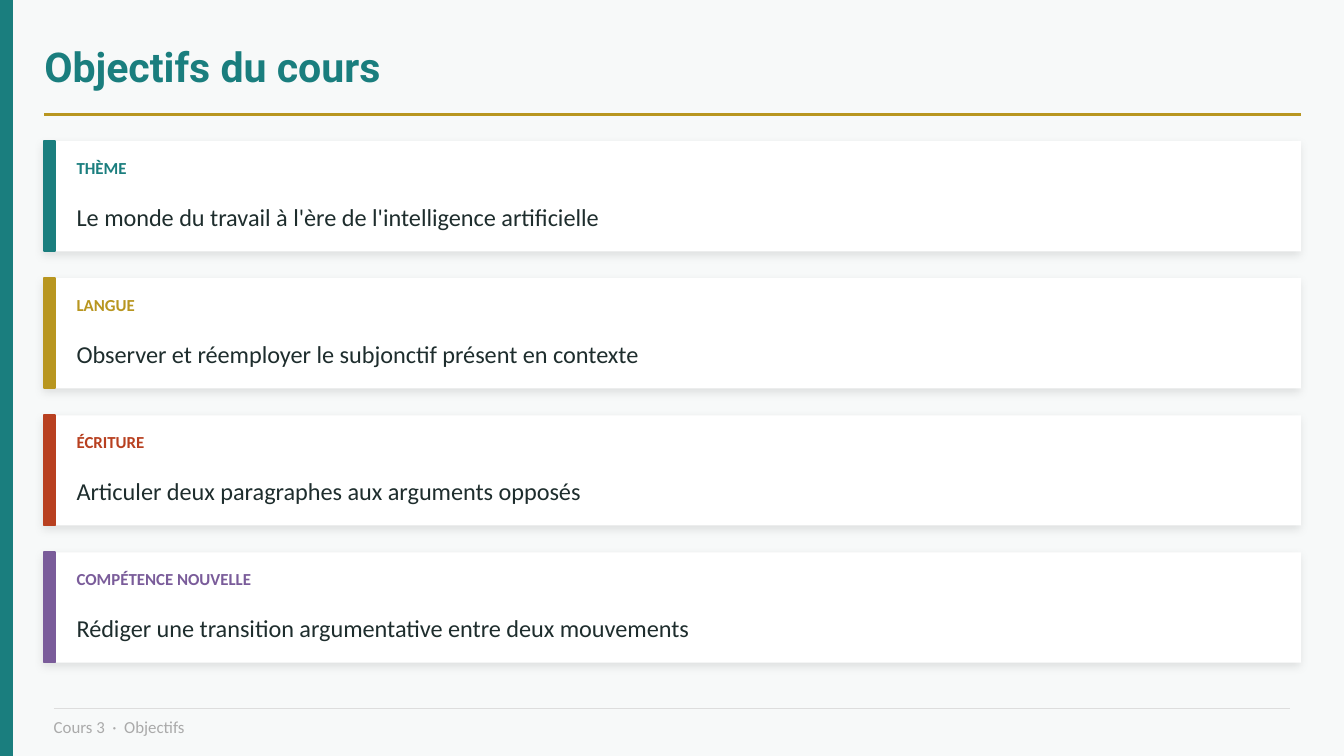
"""Build the course objectives slide: a title, four cards and a footer."""
import lxml.etree
import pptx
import pptx.dml.color
import pptx.enum.shapes
import pptx.enum.text
import pptx.oxml
import pptx.oxml.ns
import pptx.util

THEME = {
    "background": "F7F9F9", "card": "FFFFFF", "ink": "1E2D2D",
    "teal": "1A7E7E", "gold": "B89620", "rust": "B84020", "violet": "7A5C9A",
    "rule": "DDDDDD", "muted": "AAAAAA",
    "heading_font": "Roboto", "body_font": "Calibri",
    "title_size": 22, "body_size": 13, "label_size": 9,
}
OBJECTIVES = [
    ("THÈME", "Le monde du travail à l'ère de l'intelligence artificielle", "teal"),
    ("LANGUE", "Observer et réemployer le subjonctif présent en contexte", "gold"),
    ("ÉCRITURE", "Articuler deux paragraphes aux arguments opposés", "rust"),
    ("COMPÉTENCE NOUVELLE", "Rédiger une transition argumentative entre deux mouvements", "violet"),
]
SHADOW = (
    '<a:effectLst xmlns:a="http://schemas.openxmlformats.org/drawingml/2006/main">'
    '<a:outerShdw blurRad="63500" dist="25400" dir="8100000" algn="bl" rotWithShape="0">'
    '<a:srgbClr val="000000"><a:alpha val="9000"/></a:srgbClr>'
    '</a:outerShdw></a:effectLst>'
)

prs = pptx.Presentation()
prs.slide_width = pptx.util.Inches(10)
prs.slide_height = prs.slide_width * 9 // 16
s = prs.slides.add_slide(prs.slide_layouts[6])
COL = prs.slide_width / 100
ROW = prs.slide_height / 56.25
LEFT, WIDTH = 3.3, 93.5
TEXT_LEFT = LEFT + 2.4
FOOT_LEFT, FOOT_WIDTH = 4, 92
CARD_TOP, CARD_HEIGHT, CARD_PITCH = 10.5, 8.2, 10.2


def grid(x, y, w, h):
    return [round(v) for v in (x * COL, y * ROW, w * COL, h * ROW)]


def add_text(text, at, size="body_size", color="ink", font="body_font", bold=False):
    tf = s.shapes.add_textbox(*grid(*at)).text_frame
    tf.word_wrap = True
    tf.vertical_anchor = pptx.enum.text.MSO_ANCHOR.MIDDLE
    tf.margin_left = tf.margin_top = tf.margin_right = tf.margin_bottom = 0
    r = tf.paragraphs[0].add_run()
    r.text = text
    r.font.name = THEME[font]
    r.font.size = pptx.util.Pt(THEME[size])
    r.font.bold = bold
    r.font.color.rgb = pptx.dml.color.RGBColor.from_string(THEME[color])


s.background.fill.solid()
s.background.fill.fore_color.rgb = pptx.dml.color.RGBColor.from_string(THEME["background"])

bars = [(0, 0, 0.9, 56.25, "teal")]
for i, (label, goal, color) in enumerate(OBJECTIVES):
    y = CARD_TOP + i * CARD_PITCH
    bars.append((LEFT, y, WIDTH, CARD_HEIGHT, "card"))
    bars.append((LEFT, y, 0.8, CARD_HEIGHT, color))

for *at, color in bars:
    sp = s.shapes.add_shape(pptx.enum.shapes.MSO_SHAPE.RECTANGLE, *grid(*at))
    sp.fill.solid()
    sp.fill.fore_color.rgb = pptx.dml.color.RGBColor.from_string(THEME[color])
    if color == "card":
        sp.line.fill.background()
        sp._element.spPr.append(pptx.oxml.parse_xml(SHADOW))
    else:
        sp.line.color.rgb = pptx.dml.color.RGBColor.from_string(THEME[color])
        sp.line.width = pptx.util.Pt(1)
        sp.shadow.inherit = False

add_text("Objectifs du cours", (LEFT, 2.2, WIDTH, 5.5), size="title_size",
         color="teal", font="heading_font", bold=True)

for i, (label, goal, color) in enumerate(OBJECTIVES):
    y = CARD_TOP + i * CARD_PITCH
    add_text(label, (TEXT_LEFT, y + 0.8, 25, 2.4), size="label_size", color=color, bold=True)
    add_text(goal, (TEXT_LEFT, y + 3.8, 87, 3.6))

for x, y, w, color, weight in [(LEFT, 8.5, WIDTH, "gold", 1.5),
                               (FOOT_LEFT, 52.7, FOOT_WIDTH, "rule", 0.75)]:
    begin_x, begin_y, length, _ = grid(x, y, w, 0)
    line = s.shapes.add_connector(pptx.enum.shapes.MSO_CONNECTOR.STRAIGHT,
                                  begin_x, begin_y, begin_x + length, begin_y)
    line.line.color.rgb = pptx.dml.color.RGBColor.from_string(THEME[color])
    line.line.width = pptx.util.Pt(weight)
    lxml.etree.SubElement(line._element.spPr, pptx.oxml.ns.qn("a:effectLst"))

add_text("Cours 3  ·  Objectifs", (FOOT_LEFT, 53, FOOT_WIDTH, 2.2),
         size="label_size", color="muted")

prs.save("out.pptx")
